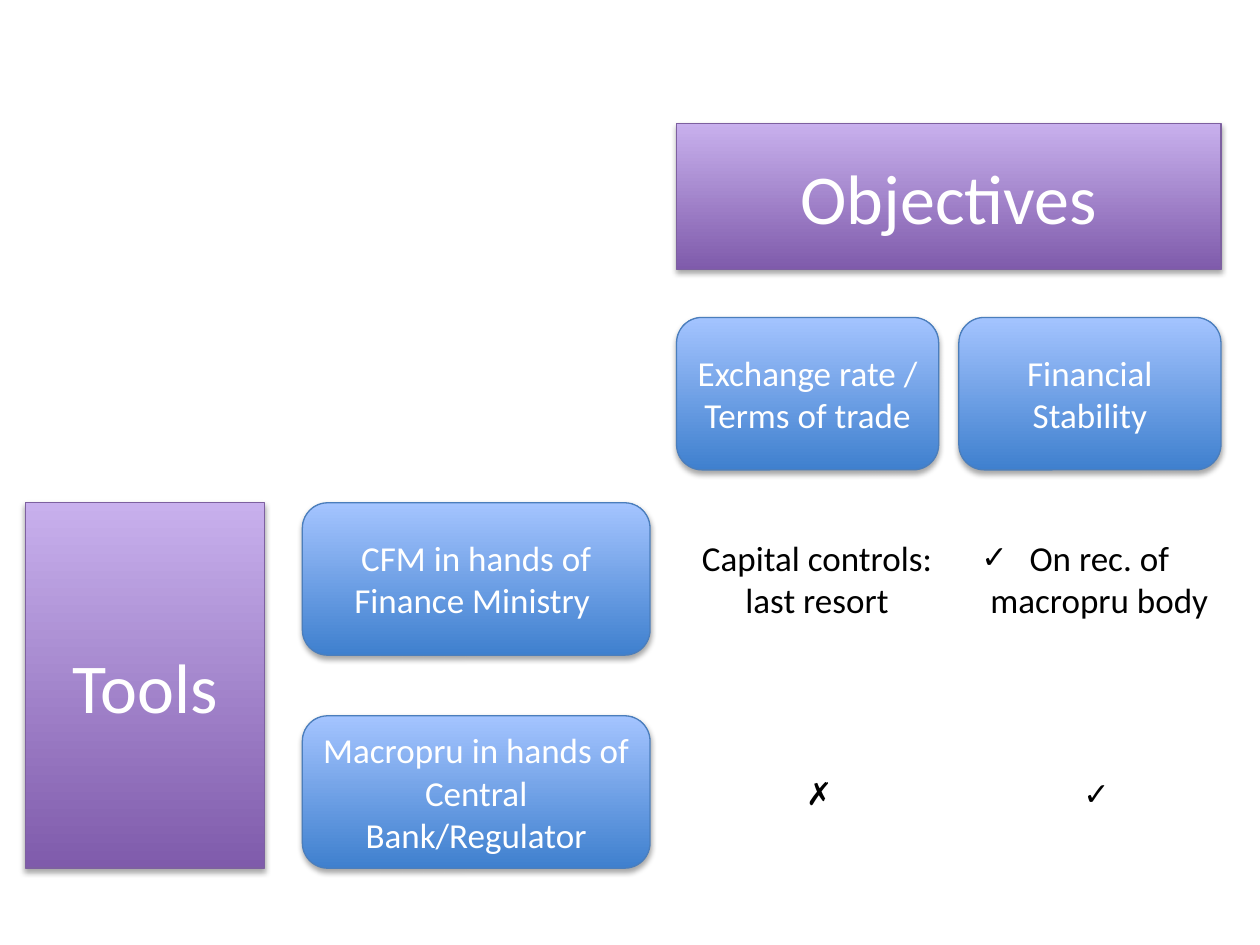
import pptx
import pptx.util
import pptx.dml.color
import pptx.enum.shapes
import pptx.enum.text
import pptx.oxml

Pt = pptx.util.Pt
RGB = pptx.dml.color.RGBColor.from_string
SHAPE = pptx.enum.shapes.MSO_SHAPE
ALIGN = pptx.enum.text.PP_ALIGN
ANCHOR = pptx.enum.text.MSO_ANCHOR
AUTO = pptx.enum.text.MSO_AUTO_SIZE

# Theme: colours, fonts and type sizes
theme = {
    "heading": {"shape": SHAPE.RECTANGLE, "stops": ("7F5BAB", "C8B0ED"), "line": "7D60A0",
                "font": {"size": Pt(40), "name": "Calibri"}},
    "label": {"shape": SHAPE.ROUNDED_RECTANGLE, "stops": ("3F80CE", "A4C4FF"), "line": "4B7EBC",
              "font": {"size": Pt(20), "name": "Calibri"}},
    "cell": {"wrap": True, "align": ALIGN.CENTER, "font": {"size": Pt(20), "name": "Calibri"}},
    "mark": {"wrap": False, "align": ALIGN.LEFT, "font": {"size": Pt(18), "name": "Arial"}},
    "on_fill": "FFFFFF",
    "on_page": "000000",
}
SHADOW = (
    '<a:effectLst xmlns:a="http://schemas.openxmlformats.org/drawingml/2006/main">'
    '<a:outerShdw blurRad="40000" dist="23000" dir="5400000" rotWithShape="0">'
    '<a:srgbClr val="000000"><a:alpha val="35000"/></a:srgbClr>'
    '</a:outerShdw></a:effectLst>'
)


def write(tf, text, align, font, color):
    p = tf.paragraphs[0]
    p.alignment = align
    r = p.add_run()
    r.text = text
    for key, value in font.items():
        setattr(r.font, key, value)
    r.font.color.rgb = RGB(color)


prs = pptx.Presentation()
prs.slide_width, prs.slide_height = Pt(720), Pt(540)
s = prs.slides.add_slide(prs.slide_layouts[6])

# Grid: tool rows on the left, objective columns on the right
label_h = 87.1
tools_x, tool_x, tool_w = 14.4, 172.8, 198.7
row1, row2 = 287.3, 409
col1, col2, col_w = 386.6, 547.9, 149.8
head_y, objective_y = 70.6, 181.4

# Headings and labels
boxes = [
    ("heading", "Tools", tools_x, row1, 136.8, row2 + label_h - row1),
    ("label", "CFM in hands of Finance Ministry ", tool_x, row1, tool_w, label_h),
    ("label", "Macropru in hands of Central Bank/Regulator", tool_x, row2, tool_w, label_h),
    ("heading", "Objectives", col1, head_y, col2 + col_w - col1, 83.5),
    ("label", "Exchange rate / Terms of trade", col1, objective_y, col_w, label_h),
    ("label", "Financial Stability", col2, objective_y, col_w, label_h),
]
for kind, text, *box in boxes:
    style = theme[kind]
    sp = s.shapes.add_shape(style["shape"], *map(Pt, box))
    sp.fill.gradient()
    sp.fill.gradient_angle = 90
    for stop, color in zip(sp.fill.gradient_stops, style["stops"]):
        stop.color.rgb = RGB(color)
    sp.line.color.rgb = RGB(style["line"])
    sp.line.width = Pt(0.75)
    sp._element.spPr.append(pptx.oxml.parse_xml(SHADOW))
    tf = sp.text_frame
    tf.word_wrap = True
    tf.vertical_anchor = ANCHOR.MIDDLE
    write(tf, text, ALIGN.CENTER, style["font"], theme["on_fill"])

# Cell texts and marks
cell_y, cell_w, cell_h = 303.1, 160.6, 55.4
mark_y, mark_w, mark_h = 438.5, 28.8, 28.8
notes = [
    ("cell", "Capital controls: last resort", col1, cell_y, cell_w, cell_h),
    ("cell", "On rec. of macropru body", col2, cell_y, cell_w, cell_h),
    ("mark", "✓", 612, mark_y, mark_w, mark_h),
    ("mark", "✗", 453.6, mark_y, 26.6, mark_h),
    ("mark", "✓", 553.7, cell_y, mark_w, mark_h),
]
for kind, text, *box in notes:
    style = theme[kind]
    tf = s.shapes.add_textbox(*map(Pt, box)).text_frame
    tf.word_wrap = style["wrap"]
    tf.auto_size = AUTO.SHAPE_TO_FIT_TEXT
    write(tf, text, style["align"], style["font"], theme["on_page"])

prs.save("out.pptx")
